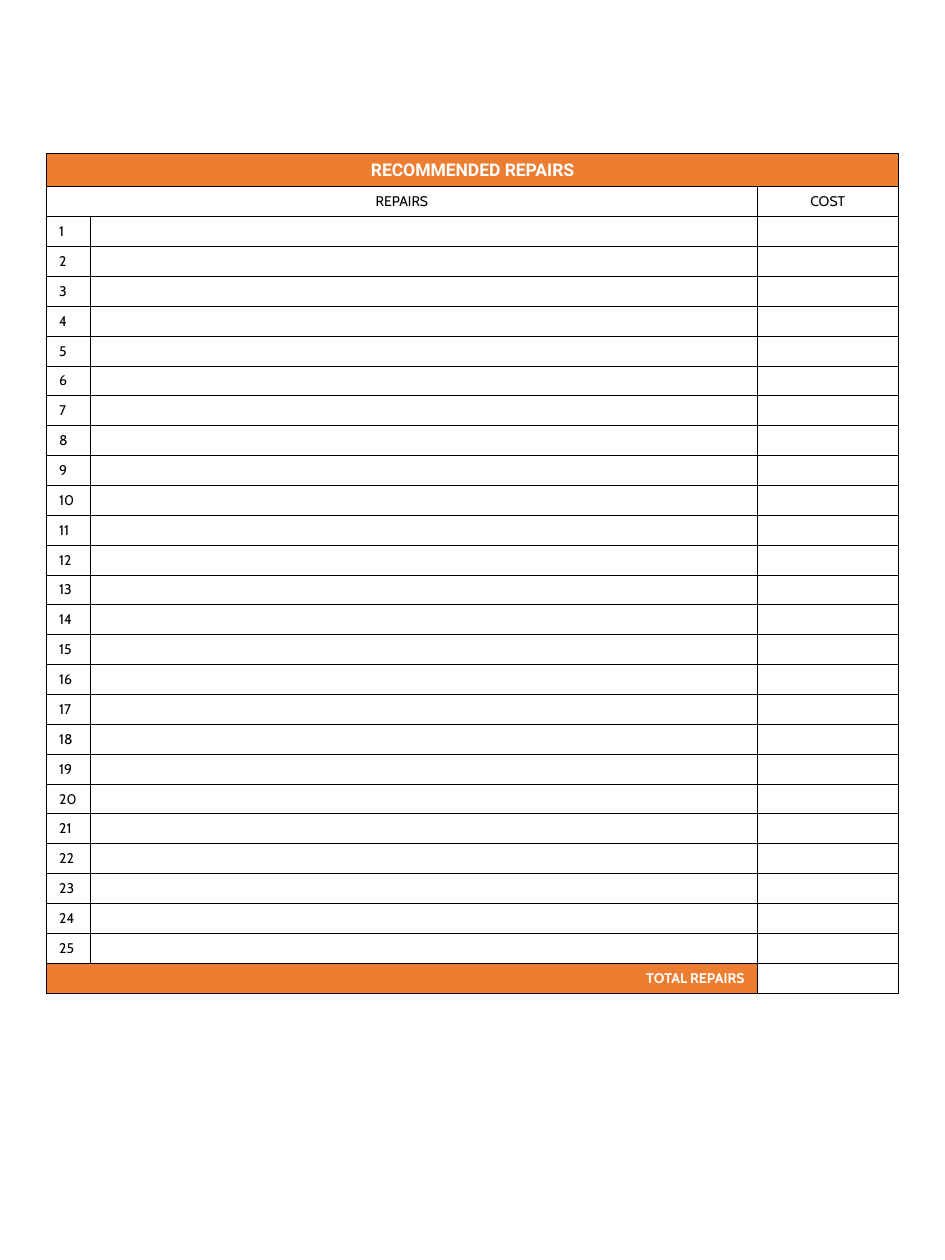
from pptx import Presentation
from pptx import util as u
from pptx.dml.color import RGBColor
from pptx.enum import text
from pptx.oxml import parse_xml
from pptx.oxml.ns import nsdecls

ORANGE = RGBColor(0xED, 0x7D, 0x31)
WHITE = RGBColor(255, 255, 255)
BLACK = RGBColor(0, 0, 0)
LEFT, MID, RIGHT = text.PP_ALIGN.LEFT, text.PP_ALIGN.CENTER, text.PP_ALIGN.RIGHT
COUNT = 25                  # numbered repair lines
COLS = (0.35, 5.29, 1.12)   # number, repair, cost


def border(cell):
    """Draw a thin black line on all four sides."""
    for side in "LRTB":
        cell._tc.get_or_add_tcPr().append(parse_xml(
            f'<a:ln{side} {nsdecls("a")} w="{u.Pt(0.5)}"><a:solidFill>'
            f'<a:srgbClr val="{BLACK}"/></a:solidFill></a:ln{side}>'))


def style(cell):
    """Give a cell its border, white fill and small text size."""
    border(cell)
    cell.fill.solid()
    cell.fill.fore_color.rgb = WHITE
    cell.vertical_anchor = text.MSO_ANCHOR.MIDDLE
    # The end mark keeps empty cells as low as filled ones
    cell.text_frame.paragraphs[0]._p.append(parse_xml(
        f'<a:endParaRPr {nsdecls("a")} sz="800"><a:latin typeface="Cabin"/></a:endParaRPr>'))


def write(cell, words, align=LEFT, size=8, face="Cabin", band=False):
    """Put words in a cell; a band is bold white on orange."""
    para = cell.text_frame.paragraphs[0]
    run = para.add_run()
    run.text = words
    para.alignment = align
    for font in (para.font, run.font):
        font.name, font.size, font.bold = face, u.Pt(size), band
        font.color.rgb = WHITE if band else BLACK
    if band:
        cell.fill.fore_color.rgb = ORANGE


def repairs(slide, left, top, width, height):
    """Build the repair table inside the given box."""
    rows = COUNT + 3
    table = slide.shapes.add_table(rows, len(COLS), left, top, width, height).table
    for col, share in zip(table.columns, COLS):
        col.width = int(width * share / sum(COLS))
    for row in table.rows:
        row.height = int(height / rows)
    for cell in table.iter_cells():
        style(cell)

    # Title and column heads
    last = rows - 1
    table.cell(0, 0).merge(table.cell(0, 2))
    for row in (1, last):
        table.cell(row, 0).merge(table.cell(row, 1))
    write(table.cell(0, 0), "RECOMMENDED REPAIRS", MID, 10, "Roboto", True)
    write(table.cell(1, 0), "REPAIRS", MID)
    write(table.cell(1, 2), "COST", MID)

    # Numbered lines and total
    for num in range(1, COUNT + 1):
        write(table.cell(num + 1, 0), str(num))
    write(table.cell(last, 0), "TOTAL REPAIRS", RIGHT, band=True)


def main():
    deck = Presentation()
    deck.slide_width, deck.slide_height = u.Inches(7.5), u.Inches(10)
    slide = deck.slides.add_slide(deck.slide_layouts[6])
    repairs(slide, u.Inches(0.37), u.Inches(1.22), u.Inches(6.76), u.Inches(6.57))
    deck.save("out.pptx")


if __name__ == "__main__":
    main()
